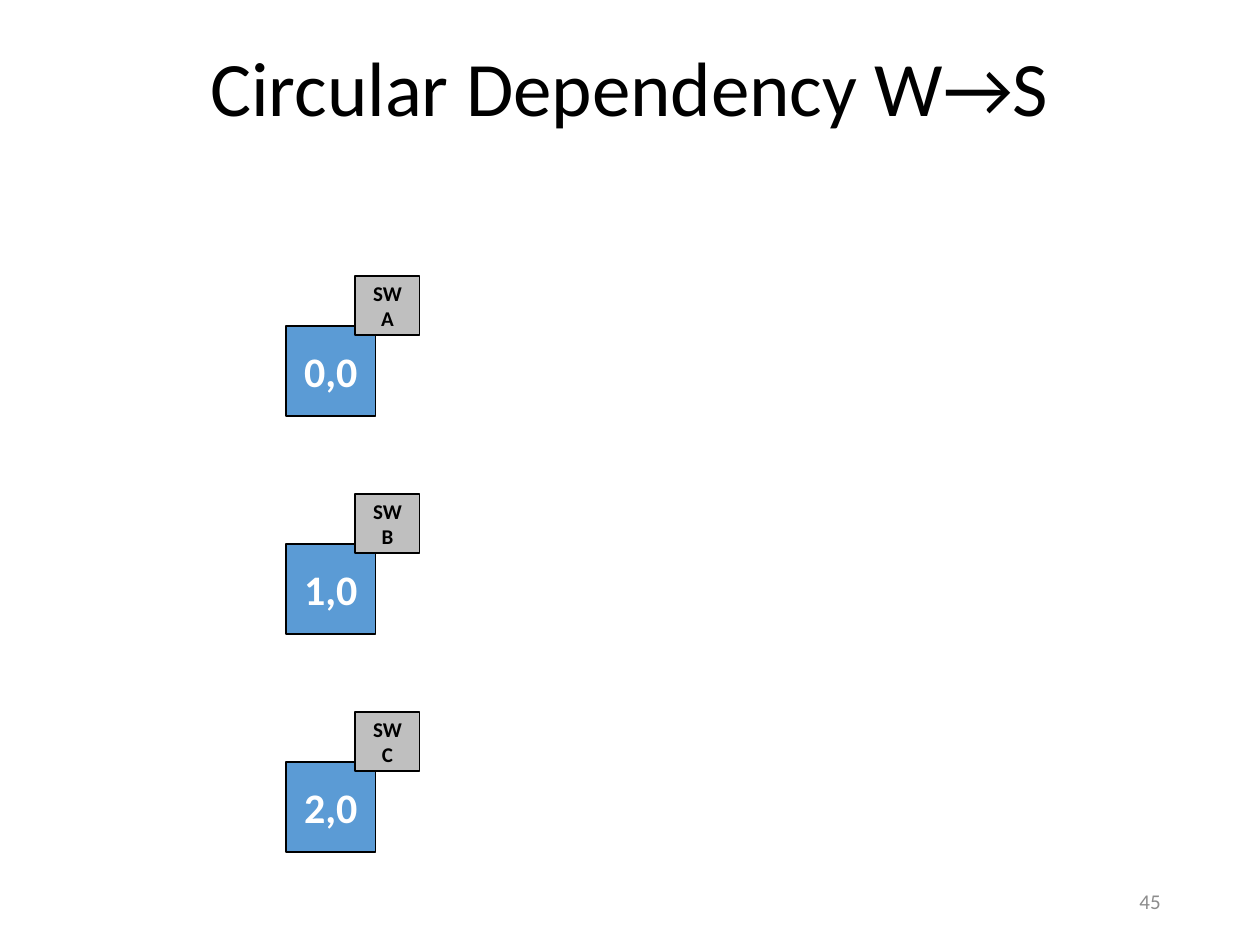
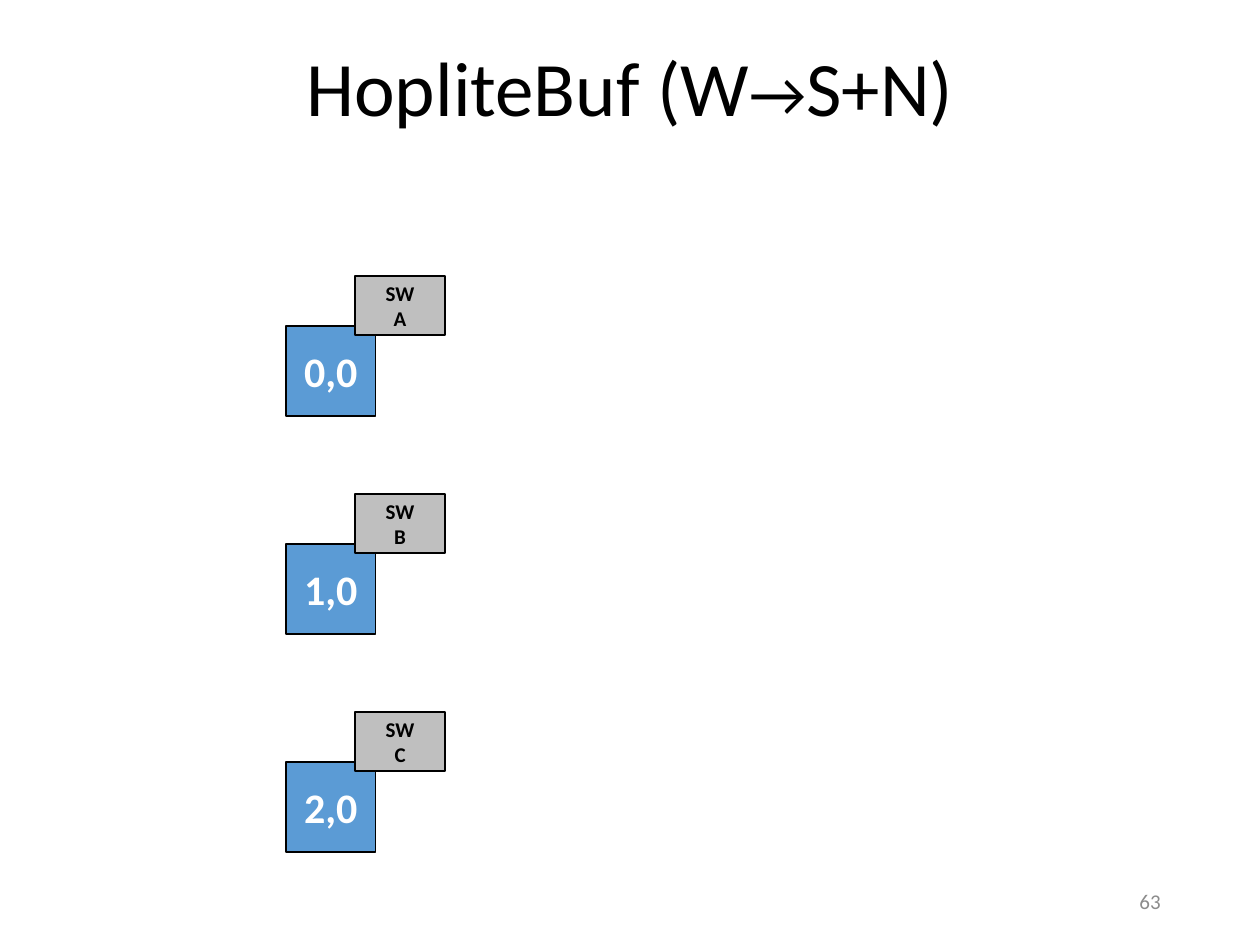
from pptx import Presentation
from pptx.dml.color import RGBColor
from pptx.enum.shapes import MSO_SHAPE
from pptx.enum.text import MSO_ANCHOR, PP_ALIGN
from pptx.util import Inches, Pt

RECTANGLE = MSO_SHAPE.RECTANGLE
MIDDLE = MSO_ANCHOR.MIDDLE
CENTER, RIGHT = PP_ALIGN.CENTER, PP_ALIGN.RIGHT

FONT = "Calibri"
BLACK, WHITE = "000000", "FFFFFF"
ROUTER_BLUE, SWITCH_GRAY, NUMBER_GRAY = "5B9BD5", "BFBFBF", "8C8C8C"

# Column of routers, each with a switch at its upper right corner
ROW_PITCH = 1.73
ROUTER_LEFT, ROUTER_TOP, ROUTER_SIZE = 2.27, 2.59, 0.71
SWITCH_LEFT, SWITCH_TOP, SWITCH_HEIGHT = 2.82, 2.19, 0.47
SWITCH_NAMES = "ABC"

# Title runs with their sizes, page number, switch width
SLIDES = [
    ([("Circular Dependency W→S", 44)], "45", 0.51),
    ([("HopliteBuf (W", 44), ("→", 36), ("S+N)", 44)], "63", 0.71),
]


def style_text(box, size, color, align=CENTER, bold=False):
    frame = box.text_frame
    frame.word_wrap = True
    frame.vertical_anchor = MIDDLE
    for para in frame.paragraphs:
        para.alignment = align
        for span in para.runs:
            span.font.name = FONT
            span.font.size = Pt(size)
            span.font.bold = bold
            span.font.color.rgb = RGBColor.from_string(color)


def add_block(page, left, top, width, height, fill, text, size, color):
    block = page.shapes.add_shape(
        RECTANGLE, Inches(left), Inches(top), Inches(width), Inches(height))
    block.shadow.inherit = False
    block.fill.solid()
    block.fill.fore_color.rgb = RGBColor.from_string(fill)
    block.line.color.rgb = RGBColor.from_string(BLACK)
    block.line.width = Pt(1)
    block.text_frame.text = text
    style_text(block, size, color, bold=True)


deck = Presentation()
deck.slide_width, deck.slide_height = Inches(10), Inches(7.5)

for title_runs, number, switch_width in SLIDES:
    page = deck.slides.add_slide(deck.slide_layouts[6])

    # Title
    title = page.shapes.add_textbox(0, 0, Inches(10), Inches(1.45))
    para = title.text_frame.paragraphs[0]
    para.line_spacing = 0.9
    for text, size in title_runs:
        para.add_run().text = text
    style_text(title, 44, BLACK)
    for span, (text, size) in zip(para.runs, title_runs):
        span.font.size = Pt(size)

    # Page number
    footer = page.shapes.add_textbox(
        Inches(7.06), Inches(6.95), Inches(2.25), Inches(0.4))
    footer.text_frame.text = number
    style_text(footer, 12, NUMBER_GRAY, RIGHT)

    # Routers, then the switches that overlap them
    for row in range(len(SWITCH_NAMES)):
        add_block(page, ROUTER_LEFT, ROUTER_TOP + row * ROW_PITCH,
                  ROUTER_SIZE, ROUTER_SIZE, ROUTER_BLUE, f"{row},0", 24, WHITE)
    for row, name in enumerate(SWITCH_NAMES):
        add_block(page, SWITCH_LEFT, SWITCH_TOP + row * ROW_PITCH,
                  switch_width, SWITCH_HEIGHT, SWITCH_GRAY, f"SW\n{name}", 12, BLACK)

deck.save("out.pptx")
